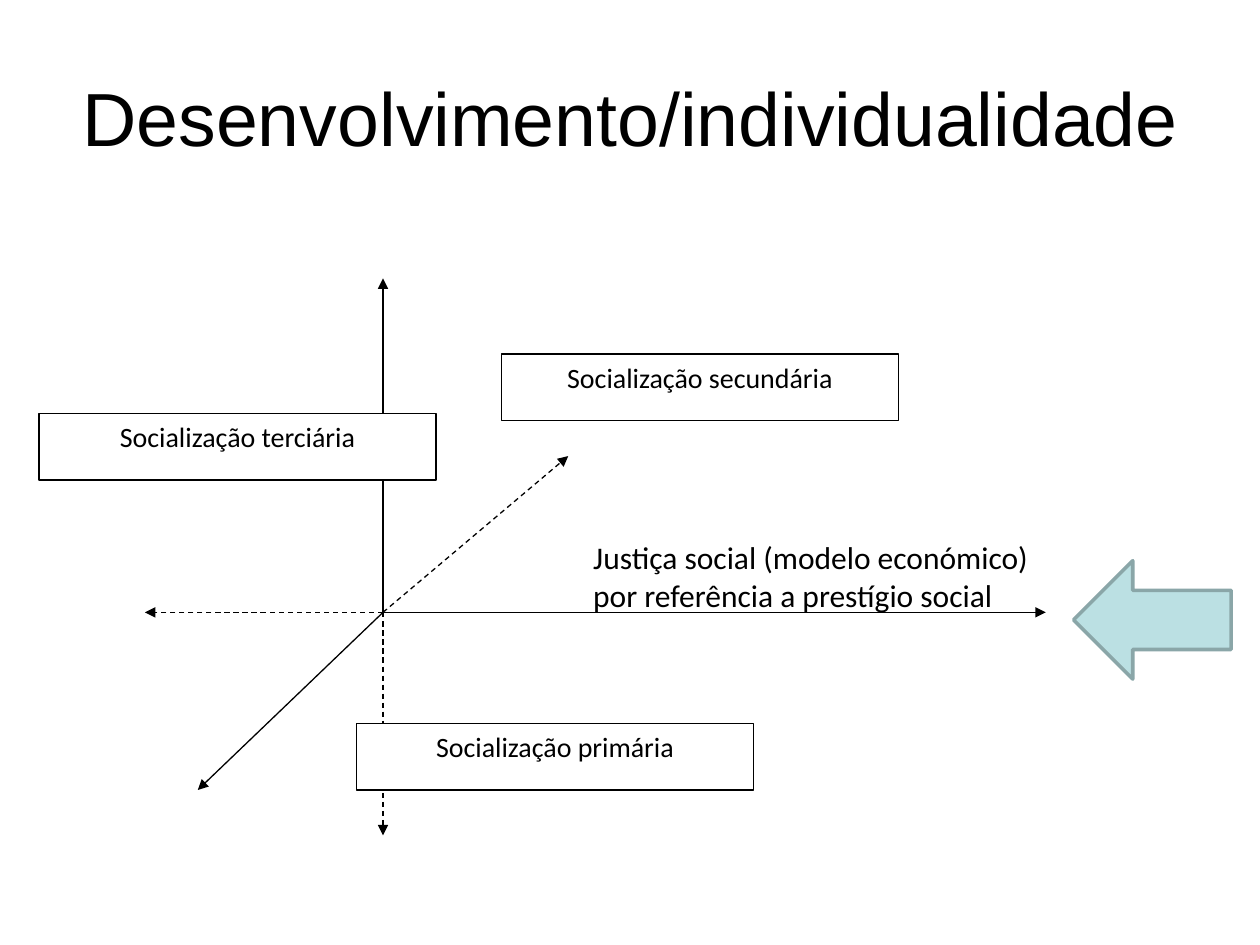
from dataclasses import dataclass

from lxml import etree
from pptx import Presentation
from pptx.dml.color import RGBColor
from pptx.enum import dml, shapes, text
from pptx.oxml import ns
from pptx.slide import Slide
from pptx.util import Inches, Pt

BLACK = RGBColor(0x00, 0x00, 0x00)
WHITE = RGBColor(0xFF, 0xFF, 0xFF)
PALE_TEAL = RGBColor(0xBB, 0xE0, 0xE3)
GREY_TEAL = RGBColor(0x8A, 0xA6, 0xA8)

ORIGIN_X, ORIGIN_Y = 3.04, 4.86
STAGE_WIDTH, STAGE_HEIGHT = 3.15, 0.53


@dataclass
class Axis:
    x: float
    y: float
    dashed: bool = False


@dataclass
class Stage:
    label: str
    left: float
    top: float


AXES = [
    Axis(ORIGIN_X, 2.21),
    Axis(1.57, 6.27),
    Axis(8.3, ORIGIN_Y),
    Axis(ORIGIN_X, 6.63, dashed=True),
    Axis(1.15, ORIGIN_Y, dashed=True),
    Axis(4.51, 3.62, dashed=True),
]

STAGES = [
    Stage("Socialização primária", 2.83, 5.74),
    Stage("Socialização secundária", 3.98, 2.81),
    Stage("Socialização terciária", 0.31, 3.28),
]


def format_text(paragraph, font_name: str, size: float) -> None:
    paragraph.font.name = font_name
    paragraph.font.size = Pt(size)
    paragraph.font.color.rgb = BLACK


def draw_title(slide: Slide) -> None:
    title = slide.shapes.title
    title.left, title.top = Inches(0.5), Inches(0.3)
    title.width, title.height = Inches(9), Inches(1.25)
    title.text_frame.text = "Desenvolvimento/individualidade"
    title.text_frame.vertical_anchor = text.MSO_ANCHOR.MIDDLE
    heading = title.text_frame.paragraphs[0]
    heading.alignment = text.PP_ALIGN.CENTER
    format_text(heading, "Arial", 43)


def draw_axis(slide: Slide, axis: Axis) -> None:
    arrow = slide.shapes.add_connector(
        shapes.MSO_CONNECTOR.STRAIGHT,
        Inches(ORIGIN_X), Inches(ORIGIN_Y), Inches(axis.x), Inches(axis.y),
    )
    arrow.line.color.rgb = BLACK
    arrow.line.width = Pt(0.75)
    if axis.dashed:
        arrow.line.dash_style = dml.MSO_LINE.DASH
    etree.SubElement(arrow.line._get_or_add_ln(), ns.qn("a:tailEnd"), type="triangle")
    etree.SubElement(arrow._element.spPr, ns.qn("a:effectLst"))


def draw_stage(slide: Slide, stage: Stage) -> None:
    box = slide.shapes.add_shape(
        shapes.MSO_SHAPE.RECTANGLE,
        Inches(stage.left), Inches(stage.top), Inches(STAGE_WIDTH), Inches(STAGE_HEIGHT),
    )
    box.shadow.inherit = False
    box.fill.solid()
    box.fill.fore_color.rgb = WHITE
    box.line.color.rgb = BLACK
    box.line.width = Pt(0.75)
    box.text_frame.text = stage.label
    box.text_frame.vertical_anchor = text.MSO_ANCHOR.TOP
    label = box.text_frame.paragraphs[0]
    label.alignment = text.PP_ALIGN.CENTER
    format_text(label, "Calibri", 16)


def draw_pointer(slide: Slide) -> None:
    pointer = slide.shapes.add_shape(
        shapes.MSO_SHAPE.LEFT_ARROW, Inches(8.52), Inches(4.45), Inches(1.25), Inches(0.94)
    )
    pointer.shadow.inherit = False
    pointer.fill.solid()
    pointer.fill.fore_color.rgb = PALE_TEAL
    pointer.line.color.rgb = GREY_TEAL
    pointer.line.width = Pt(2)


def draw_axis_caption(slide: Slide) -> None:
    caption = slide.shapes.add_textbox(Inches(4.61), Inches(4.22), Inches(3.75), Inches(0.71))
    frame = caption.text_frame
    frame.word_wrap = True
    frame.auto_size = text.MSO_AUTO_SIZE.SHAPE_TO_FIT_TEXT
    frame.text = "Justiça social (modelo económico) por referência a prestígio social"
    format_text(frame.paragraphs[0], "Calibri", 18)


def main() -> None:
    presentation = Presentation()
    presentation.slide_width = Inches(10)
    presentation.slide_height = Inches(7.5)
    slide = presentation.slides.add_slide(presentation.slide_layouts[5])
    draw_title(slide)
    for axis in AXES:
        draw_axis(slide, axis)
    for stage in STAGES:
        draw_stage(slide, stage)
    draw_pointer(slide)
    draw_axis_caption(slide)
    presentation.save("out.pptx")


if __name__ == "__main__":
    main()
